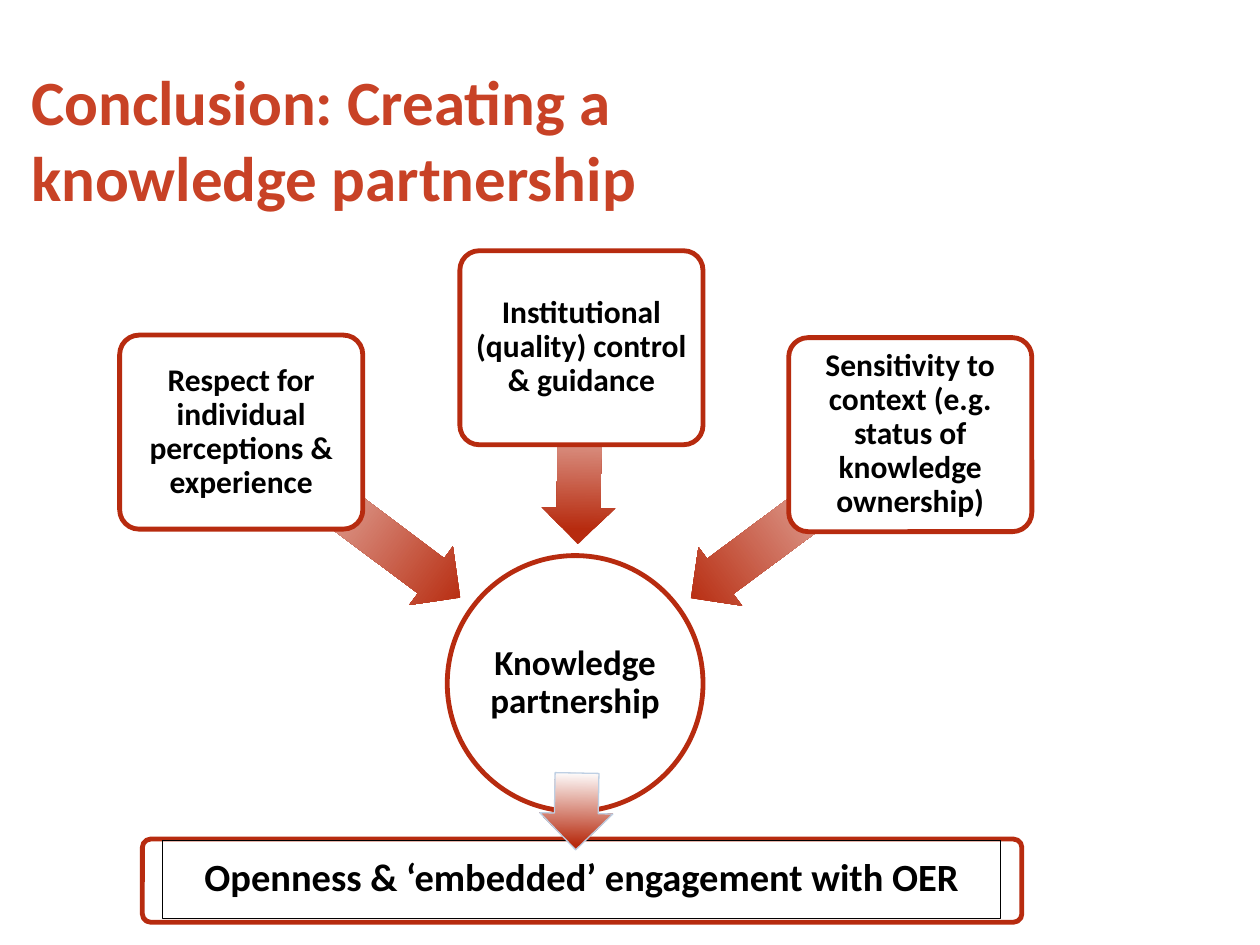
from pptx import Presentation
from pptx.dml.color import RGBColor
from pptx.enum.shapes import MSO_SHAPE as Shape
from pptx.enum.text import MSO_ANCHOR as Anchor, PP_ALIGN as Align
from pptx.util import Inches, Pt

RED = RGBColor(0xB7, 0x2B, 0x0F)
TITLE_RED = RGBColor(0xC8, 0x42, 0x26)
PALE_BLUE = RGBColor(0xBE, 0xCF, 0xE3)
WHITE = RGBColor(0xFF, 0xFF, 0xFF)
BLACK = RGBColor(0, 0, 0)

COLUMNS, ROWS = 100, 75
FACTOR_WIDTH, FACTOR_HEIGHT = 19.3, 15.4
ARROW_HEIGHT = 5.8

FACTORS = [
    ("Respect for individual perceptions & experience", 9.5, 26.6, (16.9, 38, 21.8), 216.8),
    ("Institutional (quality) control & guidance", 36.5, 19.9, (38.2, 32.5, 15.6), 271),
    ("Sensitivity to context (e.g. status of knowledge ownership)", 62.6, 26.8, (52.7, 38.1, 21.7), 323.4),
]


class PartnershipSlide:
    """Draws the elements of one slide on a grid in a shared style."""

    def __init__(self, presentation, font="Calibri"):
        self.column = presentation.slide_width / COLUMNS
        self.row = presentation.slide_height / ROWS
        self.font = font
        self.slide = presentation.slides.add_slide(presentation.slide_layouts[6])

    def frame(self, left, top, width, height):
        return (round(left * self.column), round(top * self.row),
                round(width * self.column), round(height * self.row))

    def set_text(self, shape, text, size, color=BLACK, align=Align.CENTER, inset=None):
        text_frame = shape.text_frame
        text_frame.word_wrap = True
        text_frame.vertical_anchor = Anchor.MIDDLE
        if inset is not None:
            text_frame.margin_left = text_frame.margin_right = Inches(inset)
            text_frame.margin_top = text_frame.margin_bottom = Inches(inset)
        text_frame.text = text
        paragraph = text_frame.paragraphs[0]
        paragraph.alignment = align
        for run in paragraph.runs:
            run.font.name = self.font
            run.font.size = Pt(size)
            run.font.bold = True
            run.font.color.rgb = color
        return paragraph

    def title(self, text, *place):
        shape = self.slide.shapes.add_textbox(*self.frame(*place))
        self.set_text(shape, text, 36, TITLE_RED, Align.LEFT)

    def box(self, kind, place, fill=WHITE, line=RED, weight=2.75):
        shape = self.slide.shapes.add_shape(kind, *self.frame(*place))
        shape.shadow.inherit = False
        if kind == Shape.ROUNDED_RECTANGLE:
            shape.adjustments[0] = 0.1
        if fill is None:
            shape.fill.background()
        else:
            shape.fill.solid()
            shape.fill.fore_color.rgb = fill
        shape.line.color.rgb = line
        shape.line.width = Pt(weight)
        return shape

    def label(self, shape, text, size, inset):
        paragraph = self.set_text(shape, text, size, inset=inset)
        paragraph.line_spacing = 0.9
        paragraph.space_after = Pt(size * 0.35)

    def arrow(self, left, top, width, rotation, line=None):
        place = self.frame(left, top, width, ARROW_HEIGHT)
        shape = self.slide.shapes.add_shape(Shape.LEFT_ARROW, *place)
        shape.shadow.inherit = False
        shape.rotation = rotation
        shape.adjustments[0] = 0.6
        shape.adjustments[1] = 0.5
        shape.fill.gradient()
        shape.fill.gradient_angle = 0
        stops = shape.fill.gradient_stops
        for stop, position, color in zip(stops, (0.08, 1), (RED, WHITE)):
            stop.position = position
            stop.color.rgb = color
        if line is None:
            shape.line.fill.background()
        else:
            shape.line.color.rgb = line
            shape.line.width = Pt(0.75)


def main():
    presentation = Presentation()
    presentation.slide_width = Inches(10)
    presentation.slide_height = Inches(7.5)
    page = PartnershipSlide(presentation)

    page.title("Conclusion: Creating a \vknowledge partnership", 1.5, 4.7, 90, 12.5)

    circle = page.box(Shape.OVAL, (35.5, 44.1, 20.3, 20.3))
    page.label(circle, "Knowledge partnership", 20, 0.01)

    for text, left, top, arrow, rotation in FACTORS:
        page.arrow(*arrow, rotation)
        factor = page.box(Shape.ROUNDED_RECTANGLE, (left, top, FACTOR_WIDTH, FACTOR_HEIGHT))
        page.label(factor, text, 18, 0.04)

    page.box(Shape.ROUNDED_RECTANGLE, (11.3, 66.6, 69.8, 6.6))
    outcome = page.box(Shape.RECTANGLE, (12.9, 66.7, 66.5, 6.2), None, BLACK, 0.75)
    page.label(outcome, "Openness & ‘embedded’ engagement with OER", 22, 0.05)
    page.arrow(42.7, 61.5, 6.1, 271, PALE_BLUE)

    presentation.save("out.pptx")


if __name__ == "__main__":
    main()
